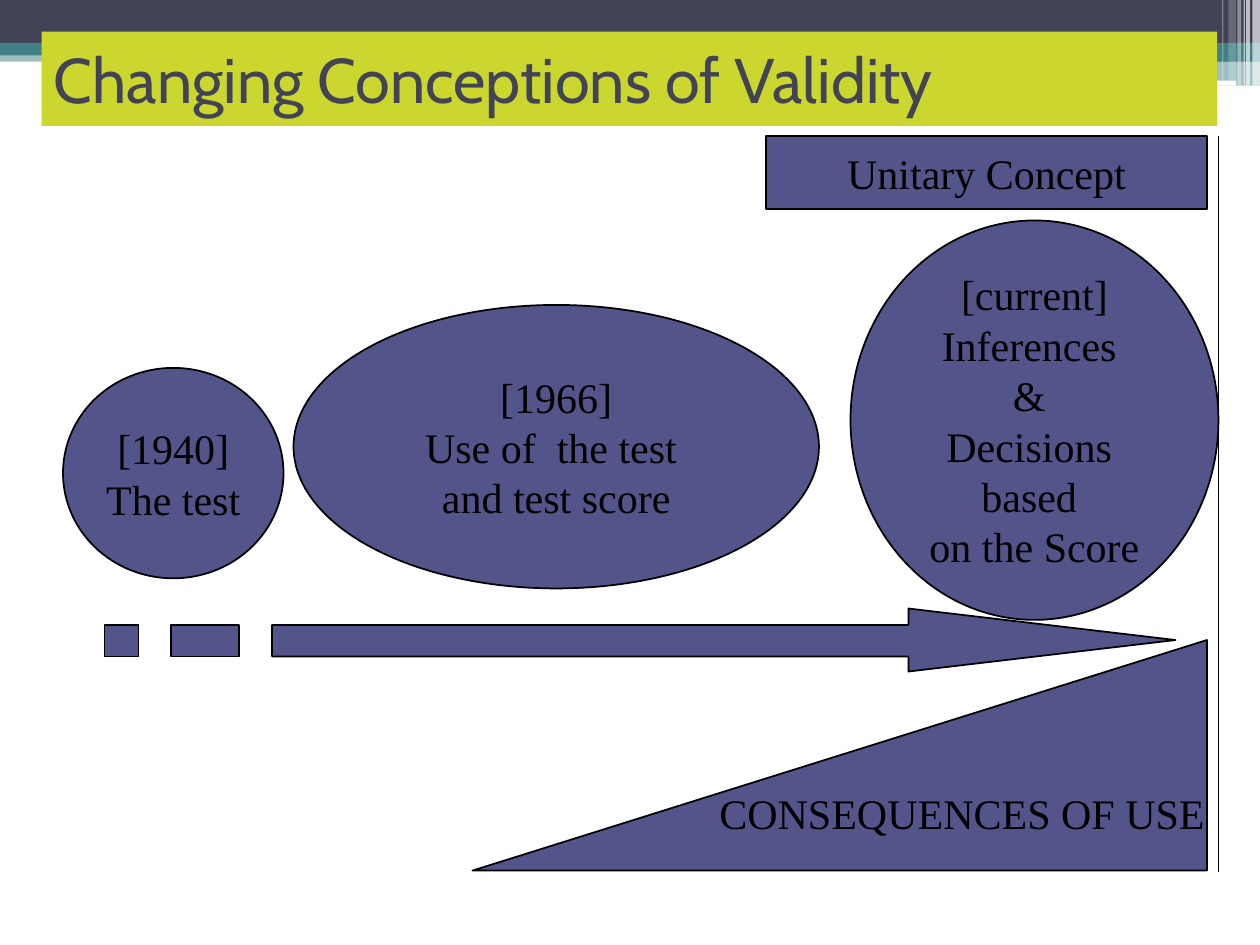
from lxml import etree
from pptx import Presentation
from pptx import util as u
from pptx.dml.color import RGBColor
from pptx.enum import shapes, text
from pptx.oxml import ns

SLATE, TEAL, WHITE, LIME = "424456", "438086", "FFFFFF", "CBD72F"
PURPLE, BLACK = "53548A", "000000"
KIND = shapes.MSO_SHAPE


def paint(shape, fill, opacity=100, line=None):
    """Set fill, opacity in percent and a 1 pt outline, without a shadow."""
    shape.shadow.inherit = False
    shape.fill.solid()
    shape.fill.fore_color.rgb = RGBColor.from_string(fill)
    if opacity < 100:
        color = shape.fill._xPr.find(".//" + ns.qn("a:srgbClr"))
        etree.SubElement(color, ns.qn("a:alpha"), val=str(opacity * 1000))
    if line:
        shape.line.color.rgb = RGBColor.from_string(line)
        shape.line.width = u.Pt(1)
    else:
        shape.line.fill.background()


def write(shape, lines, font, size, color, align, wrap=False):
    """Write one paragraph per line, centred vertically."""
    frame = shape.text_frame
    frame.word_wrap = wrap
    frame.vertical_anchor = text.MSO_ANCHOR.MIDDLE
    for index, line in enumerate(lines):
        paragraph = frame.add_paragraph() if index else frame.paragraphs[0]
        paragraph.alignment = align
        run = paragraph.add_run()
        run.text = line
        run.font.name = font
        run.font.size = u.Pt(size)
        run.font.color.rgb = RGBColor.from_string(color)


presentation = Presentation()
presentation.slide_width = u.Inches(10)
presentation.slide_height = u.Inches(7.5)
slide = presentation.slides.add_slide(presentation.slide_layouts[6])

# Header bands and the stripes in the top right corner
decorations = [
    (KIND.RECTANGLE, (0, 0.4, 10, 0.09), TEAL, 50),
    (KIND.RECTANGLE, (0, 0, 10, 0.34), SLATE, 100),
    (KIND.RECTANGLE, (0, 0.34, 10, 0.1), TEAL, 100),
    (KIND.RECTANGLE, (5.92, 0.39, 4.08, 0.1), TEAL, 100),
    (KIND.RECTANGLE, (5.92, 0.48, 4.08, 0.2), TEAL, 50),
    (KIND.ROUNDED_RECTANGLE, (8.06, 0.64, 1.75, 0.04), WHITE, 100),
]
stripes = [
    (9.94, 0.06, 0.68, 65),
    (9.89, 0.03, 0.68, 65),
    (9.87, 0.01, 0.68, 60),
    (9.82, 0.03, 0.68, 40),
    (9.75, 0.06, 0.64, 20),
    (9.7, 0.01, 0.64, 30),
]
for left, width, height, opacity in stripes:
    decorations.append((KIND.RECTANGLE, (left, 0, width, height), WHITE, opacity))
for kind, box, fill, opacity in decorations:
    shape = slide.shapes.add_shape(kind, *map(u.Inches, box))
    paint(shape, fill, opacity)

title = slide.shapes.add_shape(
    KIND.RECTANGLE, *map(u.Inches, (0.33, 0.25, 9.33, 0.75)))
paint(title, LIME)
write(title, ["Changing Conceptions of Validity"], "Cabin", 36, SLATE,
      text.PP_ALIGN.LEFT, wrap=True)

# Stages of validity, their consequences and the unifying label
concepts = [
    (KIND.OVAL, (0.5, 2.92, 1.75, 1.67), ["[1940]", "The test"]),
    (KIND.OVAL, (2.33, 2.42, 4.17, 2.25),
     ["[1966]", "Use of  the test ", "and test score"]),
    (KIND.OVAL, (6.75, 1.75, 2.92, 3.17),
     ["[current]", "Inferences ", "& ", "Decisions ", "based ", "on the Score"]),
    (KIND.RIGHT_TRIANGLE, (3.75, 5.08, 5.83, 1.83), ["CONSEQUENCES OF USE"]),
    (KIND.RECTANGLE, (6.08, 1.08, 3.5, 0.58), ["Unitary Concept"]),
]
for kind, box, lines in concepts:
    shape = slide.shapes.add_shape(kind, *map(u.Inches, box))
    paint(shape, PURPLE, line=BLACK)
    write(shape, lines, "Times New Roman", 24, BLACK, text.PP_ALIGN.CENTER)
    if kind == KIND.RIGHT_TRIANGLE:
        shape._element.spPr.xfrm.set("flipH", "1")

# Timeline arrow with two dashes at its tail
top, bottom = 4.96, 5.21
contours = [
    [(7.21, 4.83), (7.21, top), (2.16, top), (2.16, bottom),
     (7.21, bottom), (7.21, 5.33), (9.33, 5.08)],
]
for left, right in [(1.36, 1.9), (0.83, 1.1)]:
    contours.append([(left, top), (left, bottom), (right, bottom), (right, top)])
builder = slide.shapes.build_freeform(*map(u.Inches, contours[0][0]))
for index, contour in enumerate(contours):
    points = [(u.Inches(x), u.Inches(y)) for x, y in contour]
    if index:
        builder.move_to(*points[0])
    builder.add_line_segments(points[1:], close=True)
paint(builder.convert_to_shape(), PURPLE, line=BLACK)

border = slide.shapes.add_connector(
    shapes.MSO_CONNECTOR.STRAIGHT, *map(u.Inches, (9.67, 1.08, 9.67, 6.92)))
border.line.color.rgb = RGBColor.from_string(BLACK)
border.line.width = u.Pt(1)
etree.SubElement(border._element.spPr, ns.qn("a:effectLst"))

presentation.save("out.pptx")
